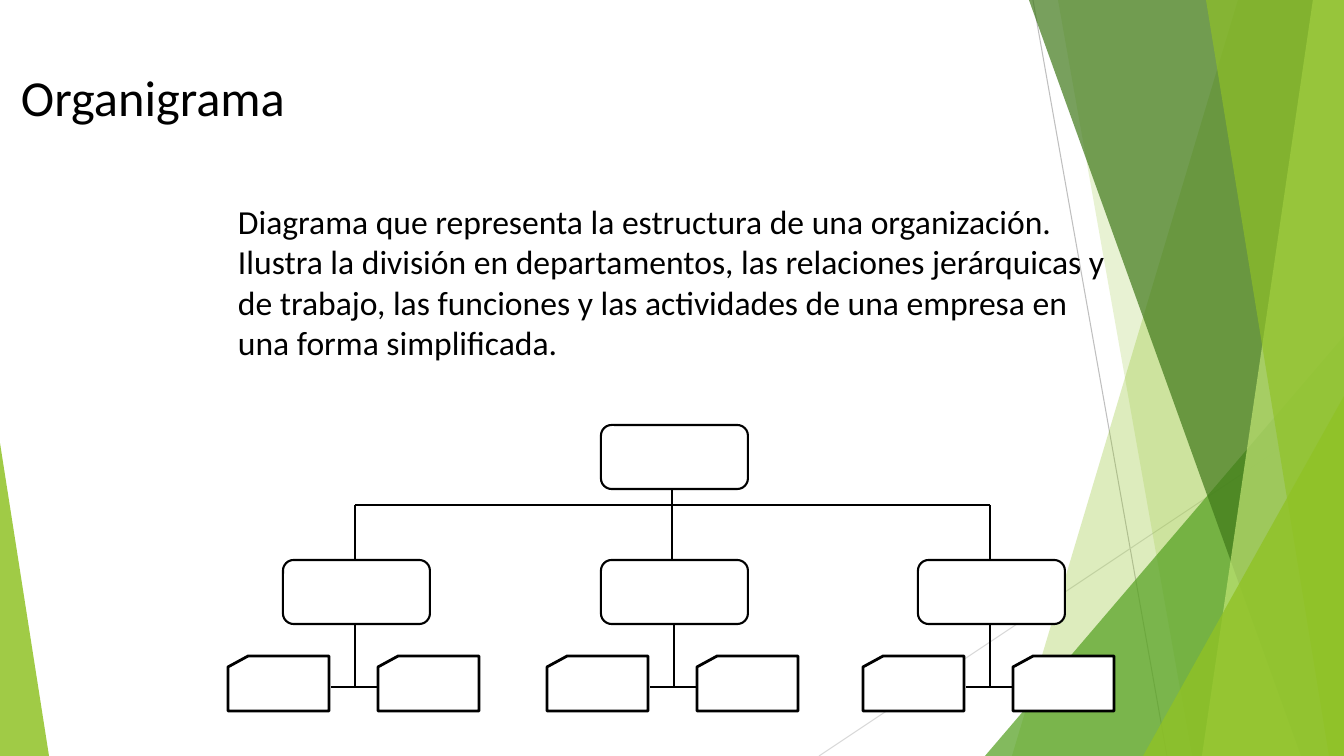
"""Build a slide that explains the organisation chart with a three-branch diagram."""
from lxml.etree import SubElement
from pptx import Presentation
from pptx.dml.color import RGBColor
from pptx.enum.shapes import MSO_CONNECTOR as LINK, MSO_SHAPE as SHAPE
from pptx.enum.text import MSO_ANCHOR as ANCHOR, MSO_AUTO_SIZE as AUTO
from pptx.oxml.ns import qn
from pptx.util import Pt

TITLE = "Organigrama"
DEFINITION = [
    "Diagrama que representa la estructura de una organización.",
    "Ilustra la división en departamentos, las relaciones jerárquicas y de trabajo, "
    "las funciones y las actividades de una empresa en una forma simplificada.",
]
COLORS = {
    "ink": "000000", "paper": "FFFFFF", "ray": "BFBFBF", "pale_ray": "D9D9D9",
    "lime": "90C226", "green": "54A021", "forest": "3F7819", "mint": "C0E474",
}
FONT = "Calibri"
SCALE = 914400 / 100.8
WIDTH, HEIGHT = 1344, 756

RAYS = [((1033, 0), (1167, HEIGHT), "ray"), ((WIDTH, 406), (819, HEIGHT), "pale_ray")]
BACK_STRIPS = [(1238, 1012, "lime", 30), (1058, 1192, "lime", 20)]
BACK_CORNERS = [(985, 336, 359, 1, "green", 72)]
FRONT_STRIPS = [(1029, 1301, "forest", 70), (1313, 1202, "mint", 70), (1206, 1329, "lime", 65)]
FRONT_CORNERS = [(1143, 396, 201, 1, "lime", 80), (0, 443, 49, 0, "lime", 85)]

BOX_W, BOX_H = 147, 64
CARD_W, CARD_H = 101, 55
HEAD_X, HEAD_Y, HEAD_STEM = 601, 425, 672
BUS_Y, DEPARTMENT_Y, CARD_Y, JOIN_Y = 505, 560, 656, 687
BRANCHES = [(283, 355), (601, 674), (918, 990)]
CARD_OFFSETS = [-127, 23]


def px(length):
    return round(length * SCALE)


def color(name):
    return RGBColor.from_string(COLORS[name])


def paint(shape, fill, alpha=100, line=None, weight=0):
    shape.shadow.inherit = False
    shape.fill.solid()
    shape.fill.fore_color.rgb = color(fill)
    if alpha < 100:
        tint = shape.element.spPr.find(qn("a:solidFill"))[0]
        SubElement(tint, qn("a:alpha")).set("val", str(alpha * 1000))
    if line:
        shape.line.color.rgb = color(line)
        shape.line.width = Pt(weight)
    else:
        shape.line.fill.background()


def add_line(start, end, ink="ink", weight=2):
    line = shapes.add_connector(LINK.STRAIGHT, *map(px, start + end))
    line.line.color.rgb = color(ink)
    line.line.width = Pt(weight)
    SubElement(line.element.spPr, qn("a:effectLst"))


def add_preset(kind, left, top, width, height, adjust=None, **look):
    shape = shapes.add_shape(kind, *map(px, (left, top, width, height)))
    if adjust is not None:
        shape.adjustments[0] = adjust
    paint(shape, **look)


def add_strips(strips):
    for top_x, bottom_x, fill, alpha in strips:
        outline = shapes.build_freeform(top_x, 0, scale=SCALE)
        outline.add_line_segments([(WIDTH, 0), (WIDTH, HEIGHT), (bottom_x, HEIGHT)])
        paint(outline.convert_to_shape(), fill, alpha)


def add_corners(corners):
    for left, top, width, apex, fill, alpha in corners:
        add_preset(SHAPE.ISOSCELES_TRIANGLE, left, top, width, HEIGHT - top,
                   apex, fill=fill, alpha=alpha)


def add_text(lines, box, size, anchor=ANCHOR.TOP, inset=10, fit=AUTO.NONE):
    frame = shapes.add_textbox(*map(px, box)).text_frame
    frame.word_wrap = True
    frame.auto_size = fit
    frame.vertical_anchor = anchor
    frame.margin_left = px(inset)
    frame.text = "\n".join(lines)
    for paragraph in frame.paragraphs:
        paragraph.font.name = FONT
        paragraph.font.size = Pt(size)
        paragraph.font.color.rgb = color("ink")


def add_box(left, top):
    add_preset(SHAPE.ROUNDED_RECTANGLE, left, top, BOX_W, BOX_H,
               fill="paper", line="ink", weight=1.5)


def add_branch(box_x, stem):
    add_box(box_x, DEPARTMENT_Y)
    add_line((stem, DEPARTMENT_Y + BOX_H), (stem, JOIN_Y))
    add_line((stem - 24, JOIN_Y), (stem + 23, JOIN_Y))
    for offset in CARD_OFFSETS:
        add_preset(SHAPE.FLOWCHART_CARD, stem + offset, CARD_Y, CARD_W, CARD_H,
                   fill="paper", line="ink", weight=2)


deck = Presentation()
deck.slide_width, deck.slide_height = px(WIDTH), px(HEIGHT)
shapes = deck.slides.add_slide(deck.slide_layouts[6]).shapes

for start, end, ink in RAYS:
    add_line(start, end, ink, 0.75)
add_strips(BACK_STRIPS)
add_corners(BACK_CORNERS)
add_strips(FRONT_STRIPS)
add_corners(FRONT_CORNERS)

add_text([TITLE], (0, 33, 913, 126), 36, anchor=ANCHOR.MIDDLE, inset=21)
add_text(DEFINITION, (228, 196, 897, 173), 24, fit=AUTO.SHAPE_TO_FIT_TEXT)

first_stem, last_stem = BRANCHES[0][1], BRANCHES[-1][1]
add_box(HEAD_X, HEAD_Y)
add_line((HEAD_STEM, HEAD_Y + BOX_H), (HEAD_STEM, DEPARTMENT_Y))
add_line((first_stem, BUS_Y), (last_stem, BUS_Y))
for outer_stem in (first_stem, last_stem):
    add_line((outer_stem, BUS_Y), (outer_stem, DEPARTMENT_Y))
for box_x, stem in BRANCHES:
    add_branch(box_x, stem)

deck.save("out.pptx")
